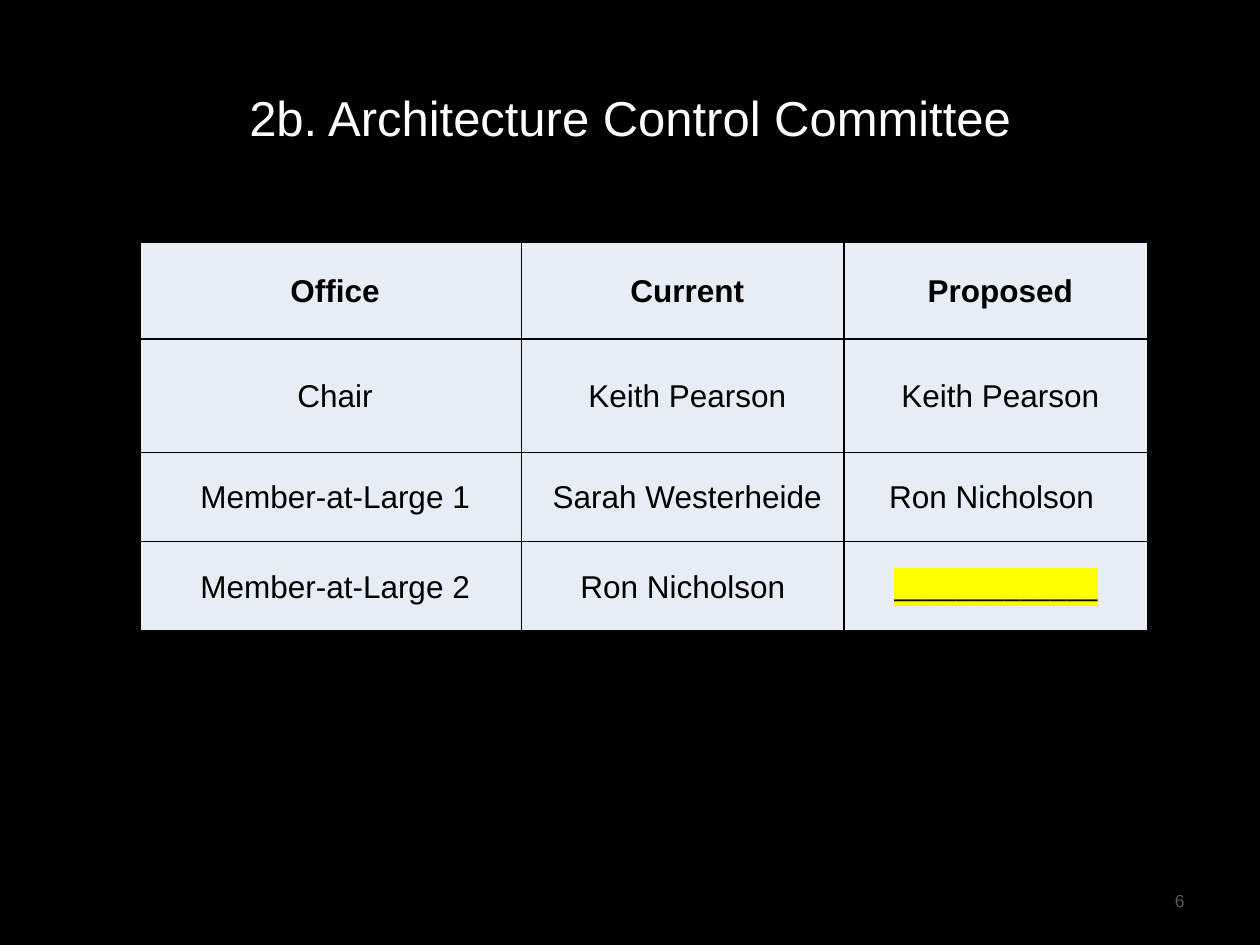
import lxml.etree
import pptx
import pptx.dml.color
import pptx.enum.text
import pptx.oxml.ns
import pptx.util

Inches = pptx.util.Inches
Pt = pptx.util.Pt
RGBColor = pptx.dml.color.RGBColor
PP_ALIGN = pptx.enum.text.PP_ALIGN
MIDDLE = pptx.enum.text.MSO_ANCHOR.MIDDLE
qn = pptx.oxml.ns.qn

BLACK = RGBColor(0x00, 0x00, 0x00)
WHITE = RGBColor(0xFF, 0xFF, 0xFF)
GRAY = RGBColor(0x59, 0x59, 0x59)
CELL_FILL = RGBColor(0xE8, 0xEC, 0xF4)
HIGHLIGHT = RGBColor(0xFF, 0xFF, 0x00)


def add_text(frame, text, size, color, align, bold=False, font="Arial"):
    """Write one formatted run into the first paragraph of a text frame."""
    frame.word_wrap = True
    frame.vertical_anchor = MIDDLE
    para = frame.paragraphs[0]
    para.alignment = align
    span = para.add_run()
    span.text = text
    span.font.name = font
    span.font.size = Pt(size)
    span.font.bold = bold
    span.font.color.rgb = color
    return span


def add_borders(cell):
    """Draw a 1 pt black line on all four sides of a cell."""
    properties = cell._tc.get_or_add_tcPr()
    for position, side in enumerate(("a:lnL", "a:lnR", "a:lnT", "a:lnB")):
        line = lxml.etree.Element(qn(side), w=str(Pt(1)))
        fill = lxml.etree.SubElement(line, qn("a:solidFill"))
        lxml.etree.SubElement(fill, qn("a:srgbClr"), val=str(BLACK))
        properties.insert(position, line)


deck = pptx.Presentation()
deck.slide_width = Inches(10)
deck.slide_height = Inches(7.5)
page = deck.slides.add_slide(deck.slide_layouts[5])
page.background.fill.solid()
page.background.fill.fore_color.rgb = BLACK

# Title
title = page.shapes.title
title.left, title.top = Inches(0.5), Inches(0.3)
title.width, title.height = Inches(9), Inches(1.25)
add_text(title.text_frame, "2b. Architecture Control Committee", 28, WHITE, PP_ALIGN.CENTER)

# Committee table
BLANK_NAME = "_____________"
committee = [
    ["\u00a0Office", " Current", " Proposed"],
    [" Chair", " Keith Pearson", " Keith Pearson"],
    [" Member-at-Large 1", " Sarah Westerheide", "Ron Nicholson "],
    [" Member-at-Large 2", "Ron Nicholson", BLANK_NAME],
]
column_widths = [3.03, 2.56, 2.41]
row_heights = [0.77, 0.9, 0.71, 0.71]
table = page.shapes.add_table(
    len(row_heights), len(column_widths), Inches(1.11), Inches(1.92),
    Inches(sum(column_widths)), Inches(sum(row_heights))).table
table.first_row = False
table.horz_banding = False
for column, width in zip(table.columns, column_widths):
    column.width = Inches(width)

for row_index, names in enumerate(committee):
    table.rows[row_index].height = Inches(row_heights[row_index])
    for column_index, name in enumerate(names):
        cell = table.cell(row_index, column_index)
        cell.margin_left = cell.margin_right = cell.margin_top = Inches(0.01)
        cell.margin_bottom = 0
        cell.vertical_anchor = MIDDLE
        cell.fill.solid()
        cell.fill.fore_color.rgb = CELL_FILL
        add_borders(cell)
        font = "Calibri" if name == BLANK_NAME else "Arial"
        span = add_text(cell.text_frame, name, 18, BLACK, PP_ALIGN.CENTER,
                        bold=row_index == 0, font=font)
        # Highlight the open position
        if name == BLANK_NAME:
            marker = lxml.etree.Element(qn("a:highlight"))
            lxml.etree.SubElement(marker, qn("a:srgbClr"), val=str(HIGHLIGHT))
            span.font._element.find(qn("a:solidFill")).addnext(marker)

# Page number
number_box = page.shapes.add_textbox(Inches(7.17), Inches(6.95), Inches(2.33), Inches(0.4))
add_text(number_box.text_frame, "6", 10, GRAY, PP_ALIGN.RIGHT)

deck.save("out.pptx")
